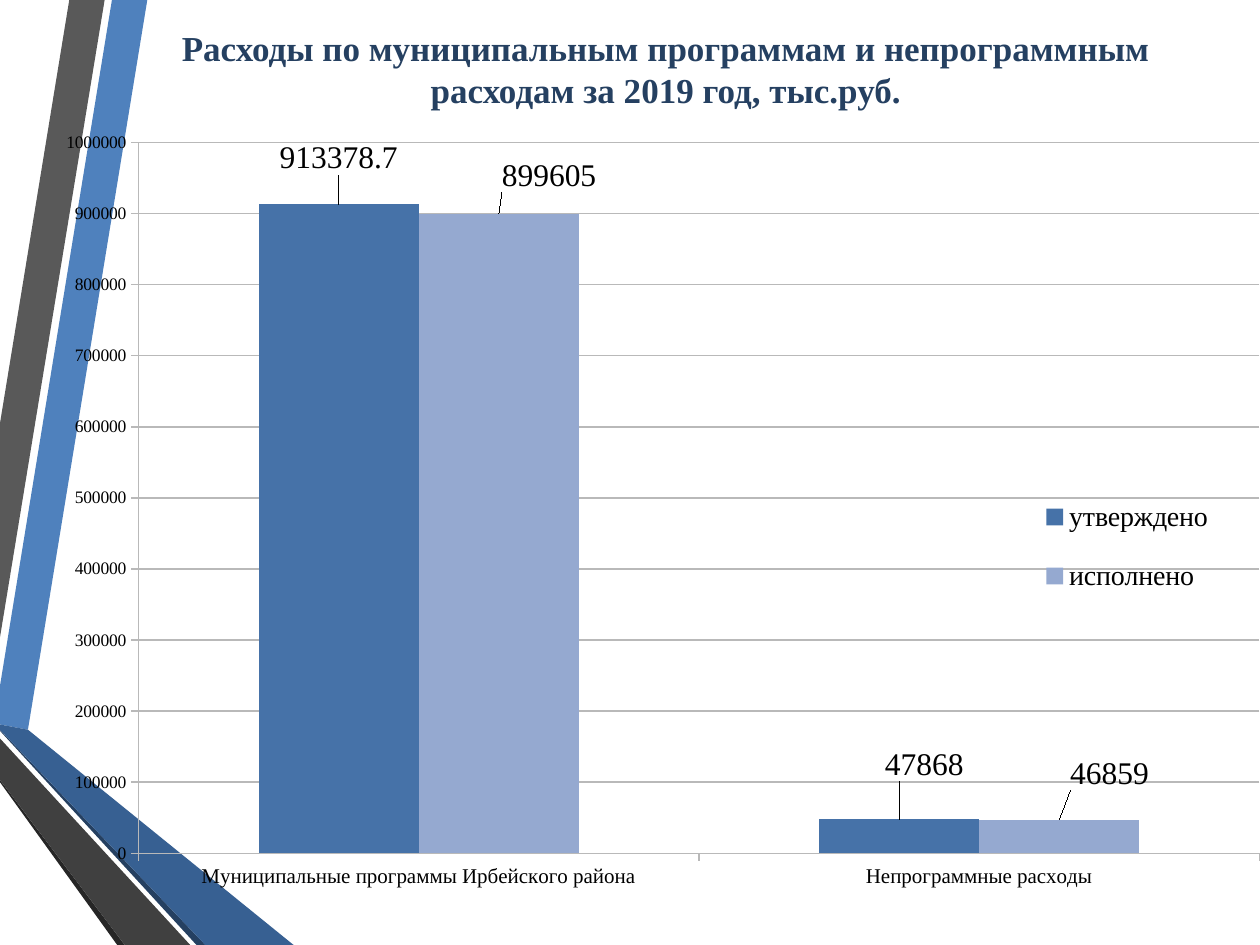
from lxml.etree import SubElement
from pptx import Presentation
from pptx.chart.data import CategoryChartData
from pptx.dml.color import RGBColor
from pptx.enum.chart import (XL_CHART_TYPE, XL_LABEL_POSITION,
                             XL_LEGEND_POSITION, XL_TICK_MARK)
from pptx.enum.text import MSO_ANCHOR, MSO_AUTO_SIZE, PP_ALIGN
from pptx.oxml.ns import qn
from pptx.util import Pt

BLUE = RGBColor(0x4F, 0x81, 0xBD)
DEEP_BLUE = RGBColor(0x37, 0x60, 0x92)
NAVY = RGBColor(0x25, 0x40, 0x61)
GREY = RGBColor(0x59, 0x59, 0x59)
DARK_GREY = RGBColor(0x40, 0x40, 0x40)
CHARCOAL = RGBColor(0x26, 0x26, 0x26)
BLACK = RGBColor(0, 0, 0)
APPROVED_BLUE = RGBColor(0x46, 0x72, 0xA8)
EXECUTED_BLUE = RGBColor(0x95, 0xA9, 0xD0)
GRID_GREY = RGBColor(0xB9, 0xB9, 0xB9)

# Ribbon outlines on the left edge, in points, from back to front
RIBBONS = [
    (BLUE, [(0, 392), (0, 414), (16, 417), (84.2, 0), (64, 0)]),
    (GREY, [(59.8, 0), (39.6, 0), (0, 242), (0, 364.3)]),
    (CHARCOAL, [(0, 445.7), (0, 447), (67, 540), (71.3, 540)]),
    (NAVY, [(0, 417), (0, 417.6), (112.3, 540), (117.4, 540)]),
    (DEEP_BLUE, [(0, 417), (117.4, 540), (167.8, 540), (16, 417), (0, 414)]),
    (DARK_GREY, [(0, 445.7), (71.3, 540), (108.7, 540), (0, 422)]),
]

# Series: name, values, colour, label shifts as fractions of the chart
SERIES = [
    ("утверждено", (913378.7, 47868), APPROVED_BLUE,
     [(0, -0.03), (0.02, -0.04)]),
    ("исполнено", (899605, 46859), EXECUTED_BLUE,
     [(0.04, -0.02), (0.04, -0.03)]),
]


class BudgetSlide:
    FONT = "Times New Roman"

    def __init__(self, prs):
        self.slide = prs.slides.add_slide(prs.slide_layouts[5])
        self.shapes = self.slide.shapes

    def style(self, font, size, color=BLACK, bold=False):
        font.name, font.size, font.bold = self.FONT, Pt(size), bold
        font.color.rgb = color

    def ribbon(self, color, points):
        corners = [(Pt(x), Pt(y)) for x, y in points]
        builder = self.shapes.build_freeform(*corners[0], scale=1.0)
        builder.add_line_segments(corners[1:], close=True)
        shape = builder.convert_to_shape()
        shape.shadow.inherit = False
        shape.fill.solid()
        shape.fill.fore_color.rgb = color
        shape.line.fill.background()

    def title(self, text, left, top, width, height):
        heading = self.shapes.title
        heading.left, heading.top = Pt(left), Pt(top)
        heading.width, heading.height = Pt(width), Pt(height)
        frame = heading.text_frame
        frame.word_wrap = True
        frame.auto_size = MSO_AUTO_SIZE.NONE
        frame.vertical_anchor = MSO_ANCHOR.MIDDLE
        paragraph = frame.paragraphs[0]
        paragraph.alignment = PP_ALIGN.CENTER
        run = paragraph.add_run()
        run.text = text
        self.style(run.font, 20, NAVY, True)
        # Bring the title in front of the ribbons
        heading._element.getparent().append(heading._element)

    def place(self, parent, after, **values):
        """Put a manual layout into a chart part, after the given child."""
        for old in parent.findall(qn("c:layout")):
            parent.remove(old)
        layout = SubElement(parent, qn("c:layout"))
        manual = SubElement(layout, qn("c:manualLayout"))
        for key, value in values.items():
            SubElement(manual, qn("c:" + key)).set("val", str(value))
        if after is None:
            parent.insert(0, layout)
        else:
            parent.find(qn(after)).addnext(layout)

    def axis(self, axis, size):
        self.style(axis.tick_labels.font, size)
        axis.major_tick_mark = XL_TICK_MARK.OUTSIDE
        axis.minor_tick_mark = XL_TICK_MARK.NONE
        axis.format.line.color.rgb = GRID_GREY

    def columns(self, categories, left, top, width, height):
        data = CategoryChartData()
        data.categories = categories
        for name, values, _, _ in SERIES:
            data.add_series(name, values)
        chart = self.shapes.add_chart(
            XL_CHART_TYPE.COLUMN_CLUSTERED, Pt(left), Pt(top),
            Pt(width), Pt(height), data).chart
        self.style(chart.font, 18)
        chart.has_title = False

        # Axes and grid
        self.axis(chart.category_axis, 12)
        amounts = chart.value_axis
        self.axis(amounts, 10)
        amounts.minimum_scale, amounts.maximum_scale = 0, 1000000
        amounts.major_unit = 100000
        amounts.has_major_gridlines = True
        amounts.major_gridlines.format.line.color.rgb = GRID_GREY

        # Columns and their shifted labels
        plot = chart.plots[0]
        plot.gap_width, plot.overlap, plot.vary_by_categories = 150, 0, False
        for series, (_, _, color, shifts) in zip(plot.series, SERIES):
            series.format.fill.solid()
            series.format.fill.fore_color.rgb = color
            for i, (dx, dy) in enumerate(shifts):
                label = series.points[i].data_label
                self.style(label.font, 18)
                label.position = XL_LABEL_POSITION.OUTSIDE_END
            for mark, (dx, dy) in zip(series._element.iter(qn("c:dLbl")),
                                      shifts):
                self.place(mark, "c:idx", x=dx, y=dy)

        # Legend over the plot
        chart.has_legend = True
        legend = chart.legend
        legend.position = XL_LEGEND_POSITION.RIGHT
        legend.include_in_layout = False
        self.style(legend.font, 16)
        self.place(legend._element, "c:legendPos", xMode="edge", yMode="edge",
                   x=0.82, y=0.44, w=0.15, h=0.18)
        plot_area = chart._chartSpace.chart.plotArea
        self.place(plot_area, None, layoutTarget="inner", xMode="edge",
                   yMode="edge", x=0.11, y=0.03, w=0.89, h=0.88)


def main():
    prs = Presentation()
    prs.slide_width, prs.slide_height = Pt(720), Pt(540)
    budget = BudgetSlide(prs)
    for color, points in RIBBONS:
        budget.ribbon(color, points)
    budget.title("Расходы по муниципальным программам и непрограммным "
                 "расходам за 2019 год, тыс.руб.", 77, 0, 607, 78.5)
    budget.columns(["Муниципальные программы Ирбейского района",
                    "Непрограммные расходы"], 0, 67.7, 720, 461.5)
    prs.save("out.pptx")


if __name__ == "__main__":
    main()
